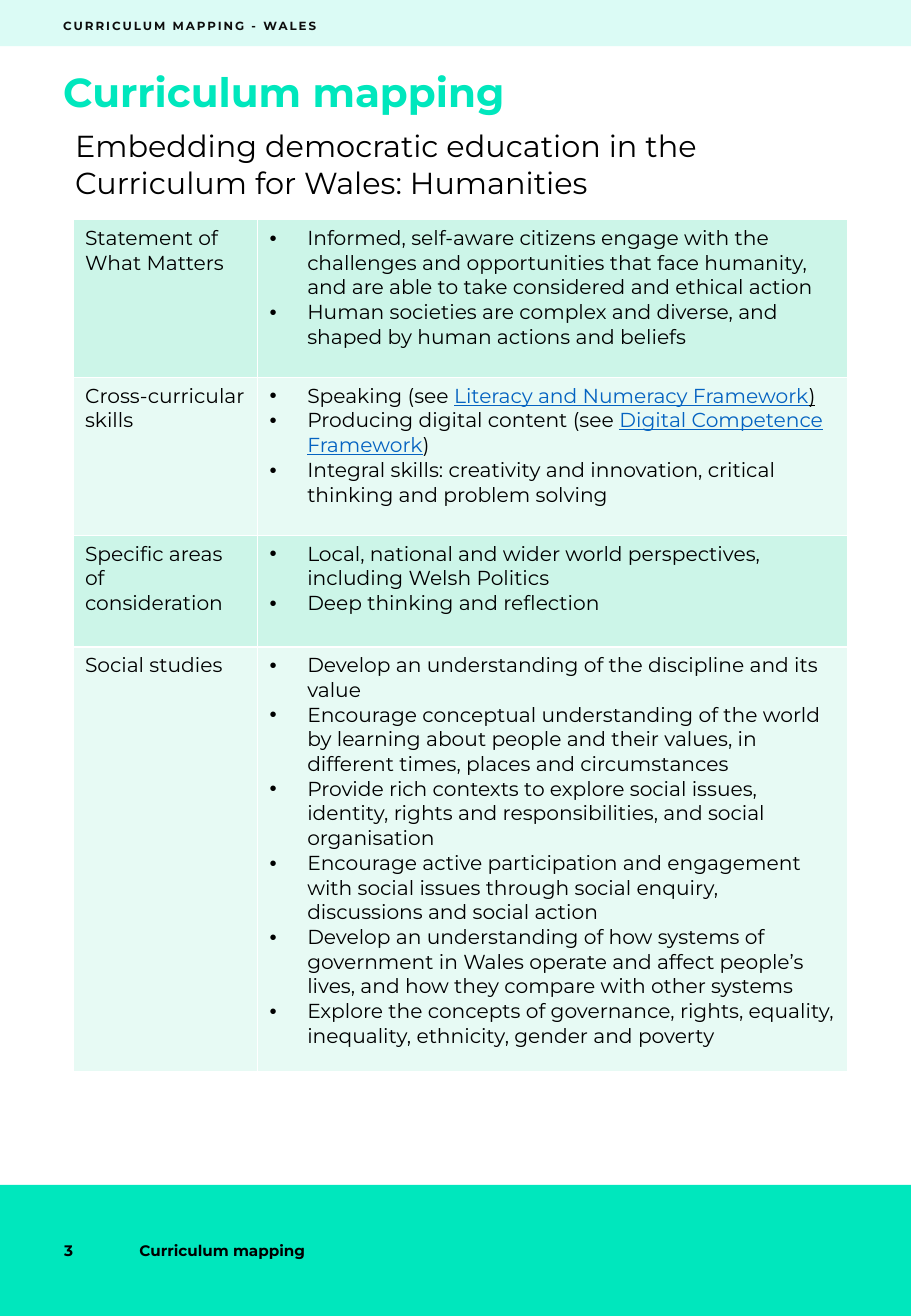
"""Build the Curriculum for Wales humanities mapping page."""
from lxml.etree import SubElement
from pptx import Presentation
from pptx.dml.color import RGBColor
from pptx.enum.shapes import MSO_SHAPE as Shape
from pptx.enum.text import MSO_ANCHOR as Anchor, MSO_AUTO_SIZE as AutoSize, PP_ALIGN as Align
from pptx.oxml.ns import qn
from pptx.util import Inches, Pt

COLORS = {"brand": "00E7BD", "black": "000000", "header": "0D0D0D", "link": "0563C1",
          "white": "FFFFFF", "dark_row": "CCF5E8", "light_row": "E7FAF4"}
WIDTH, HEIGHT = 7.5, 10.84
MARGIN = 0.52
HEADER_HEIGHT, FOOTER_HEIGHT = 0.38, 1.08
FOOTER_TOP = HEIGHT - FOOTER_HEIGHT
INDENT = Inches(0.31)

ROWS = [
    ("Statement of What Matters", 1.3, [
        ["Informed, self-aware citizens engage with the challenges and opportunities "
         "that face humanity, and are able to take considered and ethical action"],
        ["Human societies are complex and diverse, and shaped by human actions and beliefs"],
    ]),
    ("Cross-curricular skills", 1.3, [
        ["Speaking (see ",
         ("Literacy and Numeracy Framework", {"color": "link", "underline": True}),
         (")", {"underline": True})],
        ["Producing digital content (see ",
         ("Digital Competence Framework", {"color": "link", "underline": True}), ")"],
        ["Integral skills: creativity and innovation, critical thinking and problem solving"],
    ]),
    ("Specific areas of consideration", 0.92, [
        ["Local, national and wider world perspectives, including Welsh Politics"],
        ["Deep thinking and reflection"],
    ]),
    ("Social studies", 3.5, [
        ["Develop an understanding of the discipline and its value"],
        ["Encourage conceptual understanding of the world by learning about people "
         "and their values, in different times, places and circumstances"],
        ["Provide rich contexts to explore social issues, identity, rights and "
         "responsibilities, and social organisation"],
        ["Encourage active participation and engagement with social issues through "
         "social enquiry, discussions and social action"],
        ["Develop an understanding of how systems of government in Wales operate and "
         "affect people’s lives, and how they compare with other systems"],
        ["Explore the concepts of governance, rights, equality, inequality, ethnicity, "
         "gender and poverty"],
    ]),
]


def write(para, text, size=12, color="black", bold=False, underline=False, tracking=0):
    span = para.add_run()
    span.text = text
    font = span.font
    font.name, font.size, font.bold, font.underline = "Montserrat", Pt(size), bold, underline
    font.color.rgb = RGBColor.from_string(COLORS[color])
    if tracking:
        span._r.get_or_add_rPr().set("spc", str(int(tracking * 100)))


def prepare(box, left, top, width, height, anchor=Anchor.TOP, inset=True):
    box.left, box.top, box.width, box.height = map(Inches, (left, top, width, height))
    frame = box.text_frame
    frame.word_wrap, frame.auto_size, frame.vertical_anchor = True, AutoSize.NONE, anchor
    if not inset:
        frame.margin_left = frame.margin_right = frame.margin_top = frame.margin_bottom = 0
    para = frame.paragraphs[0]
    para.alignment, para.line_spacing, para.space_before = Align.LEFT, 1.0, Pt(0)
    return para


deck = Presentation()
deck.slide_width, deck.slide_height = Inches(WIDTH), Inches(HEIGHT)
page = deck.slides.add_slide(deck.slide_layouts[5])

for top, height, opacity in [(0, HEADER_HEIGHT, 14), (FOOTER_TOP, FOOTER_HEIGHT, 100)]:
    band = page.shapes.add_shape(Shape.RECTANGLE, 0, Inches(top), Inches(WIDTH), Inches(height))
    band.shadow.inherit = False
    band.fill.solid()
    band.fill.fore_color.rgb = RGBColor.from_string(COLORS["brand"])
    band.line.fill.background()
    if opacity < 100:
        tint = band._element.spPr.find(qn("a:solidFill"))[0]
        SubElement(tint, qn("a:alpha")).set("val", str(opacity * 1000))

write(prepare(page.shapes.title, MARGIN, 0.55, 6.46, 0.37, inset=False),
      "Curriculum mapping", size=24, color="brand", bold=True)

LABELS = [
    ("CURRICULUM MAPPING - WALES", (MARGIN, 0.07, 2.7, 0.28, Anchor.MIDDLE, False),
     {"size": 7, "color": "header", "bold": True, "tracking": 1.2}),
    ("Embedding democratic education in the Curriculum for Wales: Humanities",
     (MARGIN, 1, 6.46, 0.71), {"size": 18}),
    ("3", (0.43, FOOTER_TOP, 0.62, FOOTER_HEIGHT, Anchor.MIDDLE), {"size": 9, "bold": True}),
    ("Curriculum mapping", (1.05, FOOTER_TOP, 2.77, FOOTER_HEIGHT, Anchor.MIDDLE),
     {"size": 9, "bold": True}),
]
for text, place, style in LABELS:
    write(prepare(page.shapes.add_textbox(0, 0, 0, 0), *place), text, **style)

table_height = sum(height for _, height, _ in ROWS)
table = page.shapes.add_table(len(ROWS), 2, Inches(0.6), Inches(1.81),
                              Inches(6.38), Inches(table_height)).table
table.first_row = table.horz_banding = False
for column, width in zip(table.columns, (1.52, 4.86)):
    column.width = Inches(width)

for index, (heading, height, points) in enumerate(ROWS):
    table.rows[index].height = Inches(height)
    label_cell, points_cell = table.cell(index, 0), table.cell(index, 1)
    for cell in (label_cell, points_cell):
        properties = cell._tc.get_or_add_tcPr()
        for side in ("lnL", "lnR", "lnT", "lnB"):
            border = SubElement(properties, qn(f"a:{side}"), w=str(Pt(1)))
            paint = SubElement(border, qn("a:solidFill"))
            SubElement(paint, qn("a:srgbClr"), val=COLORS["white"])
        cell.fill.solid()
        row_color = "light_row" if index % 2 else "dark_row"
        cell.fill.fore_color.rgb = RGBColor.from_string(COLORS[row_color])

    write(label_cell.text_frame.paragraphs[0], heading)
    frame = points_cell.text_frame
    for number, point in enumerate(points):
        para = frame.add_paragraph() if number else frame.paragraphs[0]
        layout = para._p.get_or_add_pPr()
        layout.set("marL", str(INDENT))
        layout.set("indent", str(-INDENT))
        SubElement(layout, qn("a:buFont"), typeface="Arial")
        SubElement(layout, qn("a:buChar"), char="•")
        for piece in point:
            text, style = (piece, {}) if isinstance(piece, str) else piece
            write(para, text, **style)

deck.save("out.pptx")
